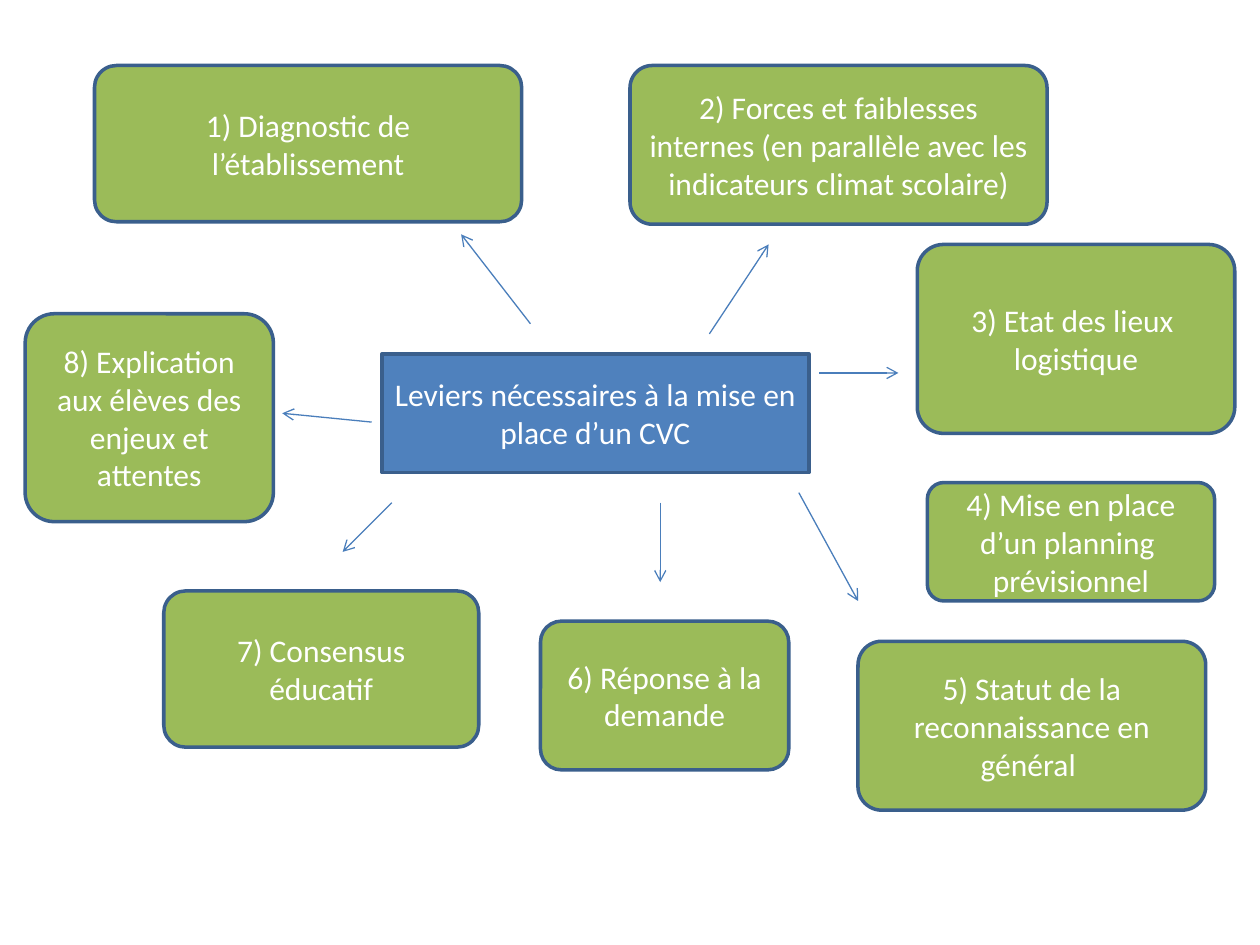
from lxml import etree
from pptx import Presentation
from pptx import util as u
from pptx.dml.color import RGBColor
from pptx.enum import shapes, text
from pptx.oxml import ns

THEME = {
    "hub": "4F81BD", "step": "9BBB59", "edge": "3A5F8C", "arrow": "4A7EBB",
    "ink": "FFFFFF", "font": "Calibri", "size": 18, "border": 2, "thin": 0.75,
}

HUB = ("Leviers nécessaires à la mise en place d’un CVC", (3.03, 2.81, 3.39, 0.94))

# Steps, clockwise from the top left: label, (left, top, width, height)
STEPS = [
    ("1) Diagnostic de l’établissement", (0.75, 0.52, 3.39, 1.24)),
    ("2) Forces et faiblesses internes (en parallèle avec les indicateurs climat scolaire)",
     (5, 0.52, 3.31, 1.26)),
    ("3) Etat des lieux  logistique", (7.28, 1.94, 2.52, 1.5)),
    ("4) Mise en place d’un planning  prévisionnel", (7.36, 3.83, 2.28, 0.94)),
    ("5) Statut de la reconnaissance en général ", (6.81, 5.09, 2.76, 1.34)),
    ("6) Réponse à la demande", (4.29, 4.93, 1.97, 1.18)),
    ("7) Consensus éducatif", (1.3, 4.69, 2.5, 1.24)),
    ("8) Explication aux élèves des enjeux et attentes", (0.2, 2.49, 1.97, 1.65)),
]

# Arrows from the hub outwards: start x, y, end x, y
ARROWS = [
    (4.21, 2.57, 3.66, 1.86),
    (5.63, 2.65, 6.1, 1.94),
    (6.5, 2.96, 7.13, 2.96),
    (6.34, 3.91, 6.81, 4.77),
    (5.24, 3.99, 5.24, 4.62),
    (3.11, 3.99, 2.72, 4.38),
    (2.95, 3.35, 2.24, 3.28),
]


def color(name):
    return RGBColor.from_string(THEME[name])


def inches(nums):
    return [u.Inches(n) for n in nums]


def set_all(item, values):
    for name, value in values.items():
        setattr(item, name, value)


def add_box(slide, kind, label, place, fill):
    box = slide.shapes.add_shape(kind, *inches(place))
    box.shadow.inherit = False
    box.fill.solid()
    box.fill.fore_color.rgb = color(fill)
    box.line.color.rgb = color("edge")
    box.line.width = u.Pt(THEME["border"])
    frame = box.text_frame
    set_all(frame, {"word_wrap": True, "vertical_anchor": text.MSO_ANCHOR.MIDDLE})
    para = frame.paragraphs[0]
    para.alignment = text.PP_ALIGN.CENTER
    run = para.add_run()
    run.text = label
    set_all(run.font, {"name": THEME["font"], "size": u.Pt(THEME["size"])})
    run.font.color.rgb = color("ink")
    return box


def add_step(slide, label, place):
    box = add_box(slide, shapes.MSO_SHAPE.ROUNDED_RECTANGLE, label, place, "step")
    box.adjustments[0] = 0.14


def add_arrow(slide, ends):
    link = slide.shapes.add_connector(shapes.MSO_CONNECTOR.STRAIGHT, *inches(ends))
    link.line.color.rgb = color("arrow")
    link.line.width = u.Pt(THEME["thin"])
    # Open arrowhead at the end, no shadow
    etree.SubElement(link.line._get_or_add_ln(), ns.qn("a:tailEnd"), type="arrow")
    etree.SubElement(link._element.spPr, ns.qn("a:effectLst"))


def main():
    deck = Presentation()
    set_all(deck, {"slide_width": u.Inches(10), "slide_height": u.Inches(7.5)})
    slide = deck.slides.add_slide(deck.slide_layouts[6])

    # Central topic
    add_box(slide, shapes.MSO_SHAPE.RECTANGLE, *HUB, "hub")

    # Surrounding steps
    for label, place in STEPS:
        add_step(slide, label, place)

    # Links
    for ends in ARROWS:
        add_arrow(slide, ends)

    deck.save("out.pptx")


if __name__ == "__main__":
    main()
